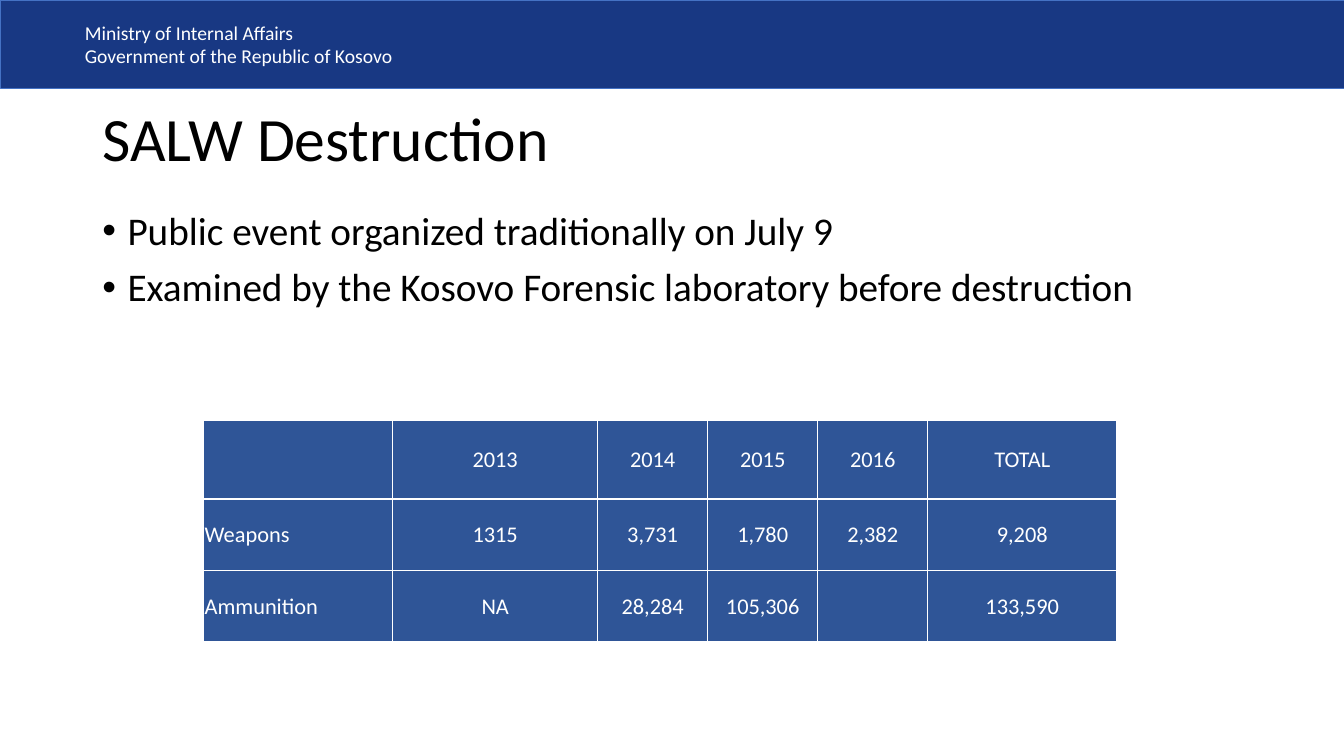
from lxml import etree
from pptx import Presentation
from pptx import util as u
from pptx.dml.color import RGBColor
from pptx.enum import shapes, text
from pptx.oxml.ns import qn

NAVY = RGBColor(0x18, 0x38, 0x83)
EDGE = RGBColor(0x44, 0x72, 0xC4)
CELL = RGBColor(0x2F, 0x55, 0x97)
WHITE = RGBColor(0xFF, 0xFF, 0xFF)
BLACK = RGBColor(0, 0, 0)

COLUMNS, ROWS = 160, 90
MARGIN, CONTENT = 11, 138

MINISTRY = ["Ministry of Internal Affairs", "Government of the Republic of Kosovo"]
POINTS = [
    "Public event organized traditionally on July 9",
    "Examined by the Kosovo Forensic laboratory before destruction",
]
DESTROYED = [
    ["", "2013", "2014", "2015", "2016", "TOTAL"],
    ["Weapons", "1315", "3,731", "1,780", "2,382", "9,208"],
    ["Ammunition", "NA", "28,284", "105,306", "", "133,590"],
]


class Briefing:
    """Draws styled elements on one slide, measured in grid columns and rows."""

    font = "Calibri"

    def __init__(self, deck):
        self.deck = deck
        self.page = deck.slides.add_slide(deck.slide_layouts[5])

    def across(self, columns):
        return u.Emu(round(self.deck.slide_width * columns / COLUMNS))

    def down(self, rows):
        return u.Emu(round(self.deck.slide_height * rows / ROWS))

    def area(self, left, top, width, height):
        return self.across(left), self.down(top), self.across(width), self.down(height)

    def style(self, para, size, color, align=text.PP_ALIGN.LEFT):
        para.alignment = align
        para.font.name = self.font
        para.font.size = u.Pt(size)
        para.font.bold = False
        para.font.color.rgb = color

    def banner(self, lines, height, indent):
        box = self.page.shapes.add_shape(
            shapes.MSO_SHAPE.RECTANGLE, *self.area(0, 0, COLUMNS, height))
        box.shadow.inherit = False
        box.fill.solid()
        box.fill.fore_color.rgb = NAVY
        box.line.color.rgb = EDGE
        box.line.width = u.Pt(0.5)
        frame = box.text_frame
        frame.margin_left = self.across(indent)
        frame.vertical_anchor = text.MSO_ANCHOR.MIDDLE
        frame.text = "\n".join(lines)
        for para in frame.paragraphs:
            self.style(para, 14, WHITE)

    def title(self, words, top, height):
        box = self.page.shapes.title
        box.left, box.top, box.width, box.height = self.area(MARGIN, top, CONTENT, height)
        frame = box.text_frame
        frame.text = words
        frame.auto_size = text.MSO_AUTO_SIZE.NONE
        frame.vertical_anchor = text.MSO_ANCHOR.MIDDLE
        para = frame.paragraphs[0]
        para.line_spacing = 0.9
        self.style(para, 44, BLACK)

    def bullets(self, points, top, height):
        box = self.page.shapes.add_textbox(*self.area(MARGIN, top, CONTENT, height))
        frame = box.text_frame
        frame.word_wrap = True
        frame.text = "\n".join(points)
        hang = self.across(3)
        for number, para in enumerate(frame.paragraphs):
            para.line_spacing = 0.9
            if number:
                para.space_before = u.Pt(10)
            layout = para._p.get_or_add_pPr()
            layout.set("marL", str(hang))
            layout.set("indent", str(-hang))
            etree.SubElement(layout, qn("a:buFont"), typeface="Arial")
            etree.SubElement(layout, qn("a:buChar"), char="•")
            self.style(para, 28, BLACK)

    def table(self, values, left, top, widths, heights):
        area = self.area(left, top, sum(widths), sum(heights))
        grid = self.page.shapes.add_table(len(heights), len(widths), *area).table
        for column, width in zip(grid.columns, widths):
            column.width = self.across(width)
        for row, height, entries in zip(grid.rows, heights, values):
            row.height = self.down(height)
            for number, (cell, entry) in enumerate(zip(row.cells, entries)):
                align = text.PP_ALIGN.CENTER if number else text.PP_ALIGN.JUSTIFY
                self.cell(cell, entry, align)

    def cell(self, cell, entry, align):
        cell.text = entry
        cell.vertical_anchor = text.MSO_ANCHOR.MIDDLE
        cell.margin_left = cell.margin_right = cell.margin_top = u.Inches(0.01)
        cell.margin_bottom = 0
        self.style(cell.text_frame.paragraphs[0], 16, WHITE, align)
        borders = cell._tc.get_or_add_tcPr()
        for side in ("lnL", "lnR", "lnT", "lnB"):
            line = etree.SubElement(borders, qn("a:" + side), w=str(u.Pt(1)))
            paint = etree.SubElement(line, qn("a:solidFill"))
            etree.SubElement(paint, qn("a:srgbClr"), val=str(WHITE))
        cell.fill.solid()
        cell.fill.fore_color.rgb = CELL


def main():
    deck = Presentation()
    deck.slide_width, deck.slide_height = u.Inches(13.33), u.Inches(7.5)
    briefing = Briefing(deck)
    briefing.banner(MINISTRY, height=10.5, indent=10.1)
    briefing.title("SALW Destruction", top=11, height=11.6)
    briefing.bullets(POINTS, top=24.6, height=57.1)
    briefing.table(DESTROYED, left=24.25, top=50,
                   widths=[22.5, 24.4, 13.1, 13.1, 13.1, 22.5],
                   heights=[9.4, 8.5, 8.5])
    deck.save("out.pptx")


if __name__ == "__main__":
    main()
